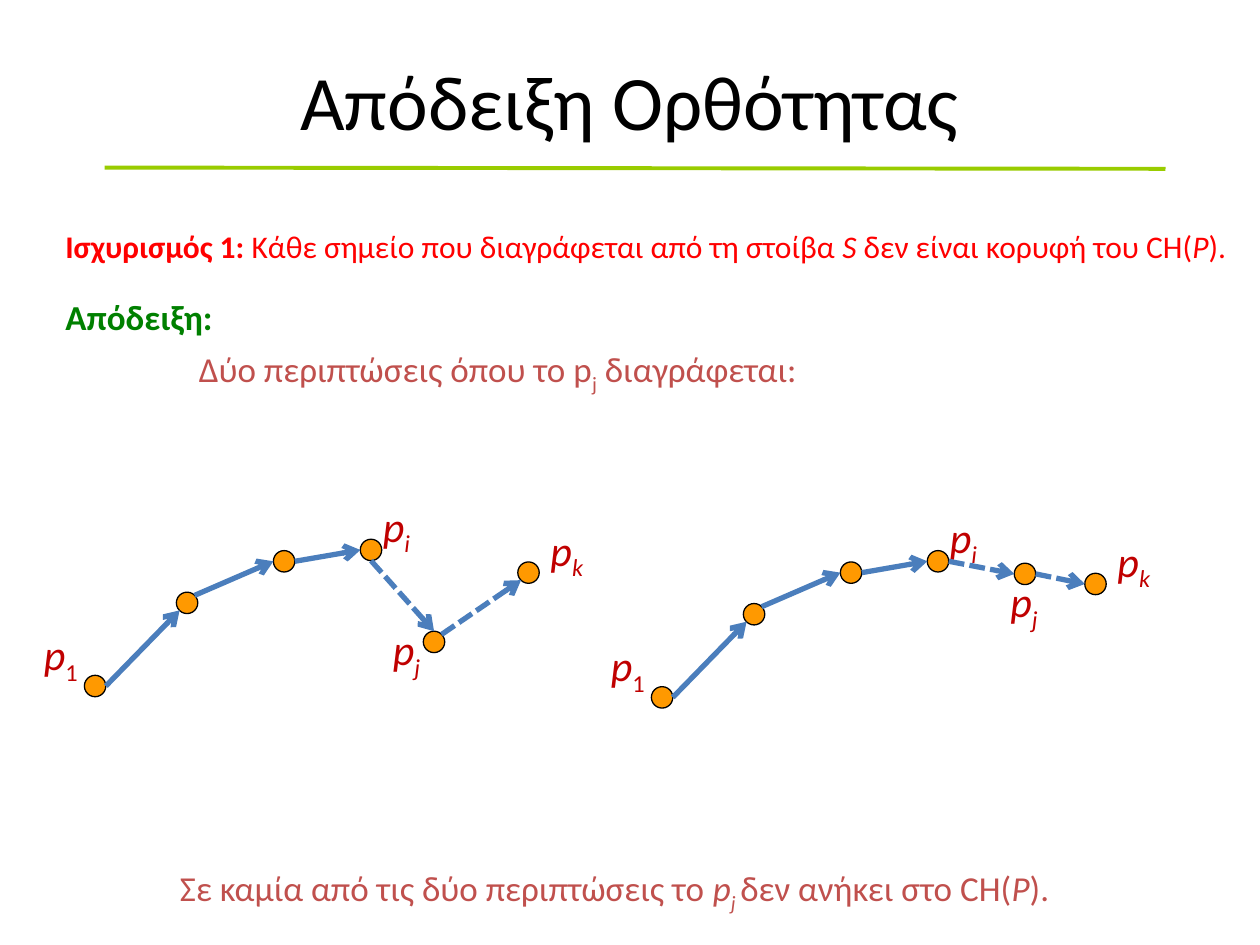
from dataclasses import dataclass

from lxml.etree import SubElement
from pptx import Presentation
from pptx.dml.color import RGBColor as Rgb
from pptx.enum.dml import MSO_LINE
from pptx.enum.shapes import MSO_CONNECTOR as Connector, MSO_SHAPE as Shape
from pptx.enum.text import MSO_ANCHOR as Anchor, MSO_AUTO_SIZE as AutoSize, PP_ALIGN as Align
from pptx.oxml.ns import qn
from pptx.util import Inches, Pt


@dataclass(frozen=True)
class Theme:
    font: str = "Calibri"
    title: Rgb = Rgb(0, 0, 0)
    rule: Rgb = Rgb(0x99, 0xCC, 0x00)
    claim: Rgb = Rgb(0xFF, 0, 0)
    proof: Rgb = Rgb(0, 0x80, 0)
    remark: Rgb = Rgb(0xC0, 0x50, 0x4D)
    label: Rgb = Rgb(0xC0, 0, 0)
    point: Rgb = Rgb(0xFF, 0x99, 0x00)
    outline: Rgb = Rgb(0, 0, 0)
    edge: Rgb = Rgb(0x4B, 0x7E, 0xBC)
    title_size: int = 44
    claim_size: int = 18
    body_size: int = 20
    label_size: int = 24


THEME = Theme()
DOT = 0.17

# Where an edge meets a point, as fractions of the point's size
SITES = {"top": (0.5, 0), "bottom": (0.5, 1), "left": (0, 0.5), "right": (1, 0.5),
         "top right": (0.85, 0.15), "bottom left": (0.15, 0.85)}

# Both cases share the chain from p1 to pi; offsets are from the case's corner
CHAIN = [(0.42, 1.44), (1.15, 0.78), (1.92, 0.45), (2.61, 0.36)]
CHAIN_SITES = [("right", "bottom left"), ("top right", "left"), ("right", "left")]
PK = (3.86, 0.54)


def add_text(shapes, box, parts, size, color):
    """Place one line; each part is (text, style letters): b, i or s for subscript."""
    text_box = shapes.add_textbox(*map(Inches, box))
    frame = text_box.text_frame
    frame.word_wrap = False
    frame.auto_size = AutoSize.SHAPE_TO_FIT_TEXT
    para = frame.paragraphs[0]
    for text, style in parts:
        span = para.add_run()
        span.text = text
        font = span.font
        font.name, font.size = THEME.font, Pt(size)
        font.color.rgb = color
        font.bold, font.italic = "b" in style, "i" in style
        if "s" in style:
            span._r.get_or_add_rPr().set("baseline", "-25000")


def add_line(shapes, start, end, color, width, arrow=False, dashed=False):
    line = shapes.add_connector(Connector.STRAIGHT, *map(Inches, (*start, *end)))
    line.line.color.rgb = color
    line.line.width = Pt(width)
    if dashed:
        line.line.dash_style = MSO_LINE.SQUARE_DOT
    if arrow:
        SubElement(line.line._get_or_add_ln(), qn("a:tailEnd"), type="arrow")
    SubElement(line._element.spPr, qn("a:effectLst"))


def add_title(page, box):
    title = page.shapes.title
    title.left, title.top, title.width, title.height = map(Inches, box)
    frame = title.text_frame
    frame.text = "Απόδειξη Ορθότητας"
    frame.vertical_anchor = Anchor.MIDDLE
    para = frame.paragraphs[0]
    para.alignment = Align.CENTER
    font = para.runs[0].font
    font.name, font.size = THEME.font, Pt(THEME.title_size)
    font.color.rgb = THEME.title
    # Rule under the title
    left, top, _, height = box
    add_line(page.shapes, (left + 0.08, top + height - 0.09),
             (left + 8.5, top + height - 0.08), THEME.rule, 2.25)


def add_statements(page, left, top):
    """Claim, proof heading and introduction of the two cases."""
    add_text(page.shapes, (left, top, 9.64, 0.4), [
        ("Ισχυρισμός 1: ", "b"),
        ("Κάθε σημείο που διαγράφεται από τη στοίβα ", ""), ("S ", "i"),
        ("δεν είναι κορυφή του CH(", ""), ("P", "i"), (").", ""),
    ], THEME.claim_size, THEME.claim)
    add_text(page.shapes, (left, top + 0.55, 1.38, 0.44), [("Απόδειξη:", "b")],
             THEME.body_size, THEME.proof)
    add_text(page.shapes, (left + 1.06, top + 0.96, 5.06, 0.44), [
        ("Δύο περιπτώσεις όπου το p", ""), ("j", "s"), (" διαγράφεται: ", ""),
    ], THEME.body_size, THEME.remark)


def add_case(page, left, top, pj, pj_label, dashed_sites):
    """Point chain in which pj is removed from the stack."""
    shapes = page.shapes.add_group_shape().shapes
    points = [(left + x, top + y) for x, y in [*CHAIN, pj, PK]]

    # Points
    for x, y in points:
        dot = shapes.add_shape(Shape.OVAL, *map(Inches, (x, y, DOT, DOT)))
        dot.shadow.inherit = False
        dot.fill.solid()
        dot.fill.fore_color.rgb = THEME.point
        dot.line.color.rgb = THEME.outline
        dot.line.width = Pt(0.75)

    # Labels
    labels = [("1", "s", (0, 1.02), 0.49), ("j", "is", pj_label, 0.43),
              ("i", "is", (2.69, 0), 0.43), ("k", "is", (4.02, 0.19), 0.48)]
    for index, style, (x, y), width in labels:
        add_text(shapes, (left + x, top + y, width, 0.5), [("p", "i"), (index, style)],
                 THEME.label_size, THEME.label)

    # Edges: solid along the chain, dashed through pj
    def meet(point, site):
        return [at + DOT * share for at, share in zip(point, SITES[site])]

    sites = CHAIN_SITES + dashed_sites
    for number, (start, end, (leave, enter)) in enumerate(zip(points, points[1:], sites)):
        add_line(shapes, meet(start, leave), meet(end, enter), THEME.edge, 3,
                 arrow=True, dashed=number >= len(CHAIN_SITES))


def add_conclusion(page, box):
    add_text(page.shapes, box, [
        ("Σε καμία από τις δύο περιπτώσεις το ", ""), ("p", "i"), ("j ", "is"),
        ("δεν ανήκει στο CH(", ""), ("P", "i"), (").", ""),
    ], THEME.body_size, THEME.remark)


def main():
    deck = Presentation()
    deck.slide_width, deck.slide_height = Inches(10), Inches(7.5)
    page = deck.slides.add_slide(deck.slide_layouts[5])
    add_title(page, (0.75, 0.17, 8.5, 1.25))
    add_statements(page, 0.42, 1.75)
    add_case(page, 0.25, 3.92, pj=(3.11, 1.09), pj_label=(2.77, 0.98),
             dashed_sites=[("bottom", "top"), ("top right", "bottom left")])
    add_case(page, 4.75, 4.01, pj=(3.3, 0.46), pj_label=(3.17, 0.51),
             dashed_sites=[("right", "left")] * 2)
    add_conclusion(page, (1.33, 6.83, 7.42, 0.44))
    deck.save("out.pptx")


if __name__ == "__main__":
    main()
